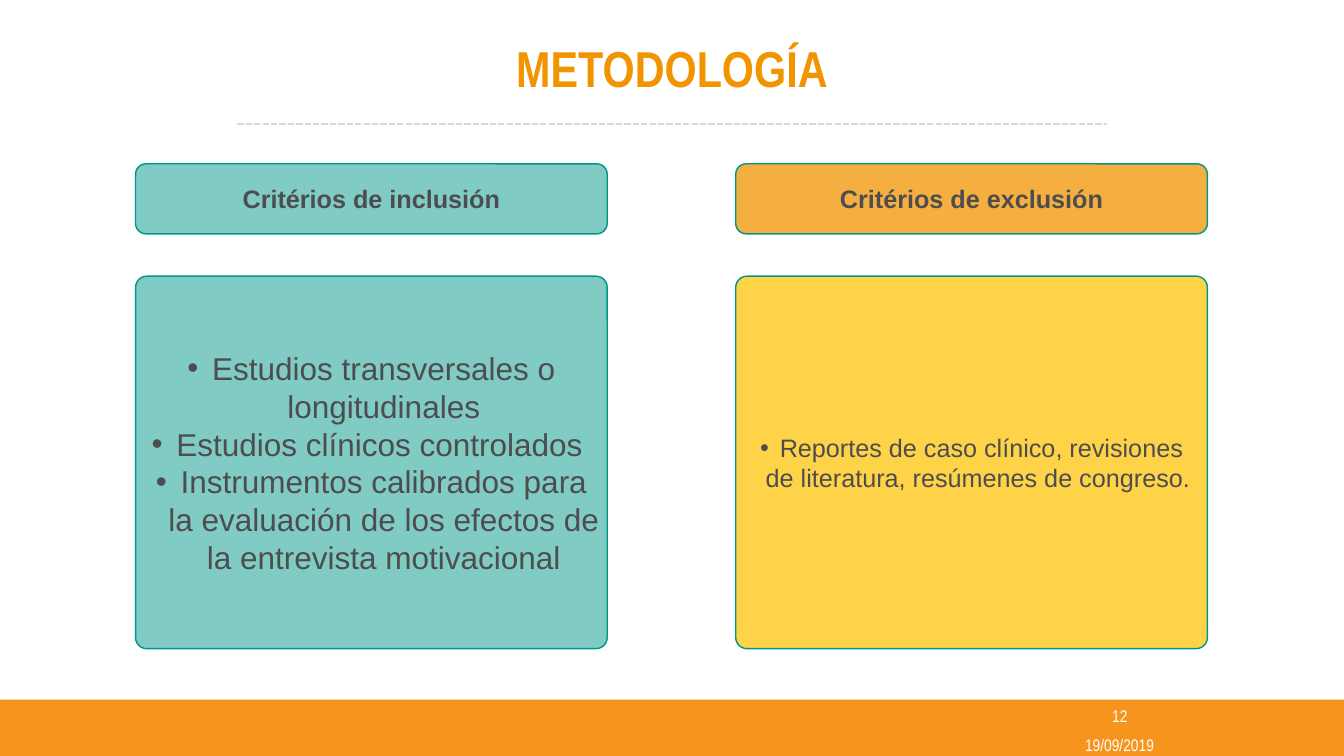
"""Build the methodology slide with its inclusion and exclusion criteria."""
from dataclasses import dataclass

from lxml import etree
from pptx import Presentation
from pptx import util as u
from pptx.dml.color import RGBColor
from pptx.enum import dml, shapes, text as t
from pptx.oxml import ns

PX = 9144


@dataclass(frozen=True)
class Theme:
    """Colours, fonts and type sizes of the slide."""
    orange: str = "F7941D"
    title: str = "F29400"
    white: str = "FFFFFF"
    ink: str = "4D4D4F"
    rule: str = "D9D9D9"
    edge: str = "009688"
    teal: str = "80CBC4"
    amber: str = "F5AF40"
    yellow: str = "FFD347"
    narrow: str = "Arial Narrow"
    sans: str = "Arial"
    title_size: int = 72
    list_size: int = 45
    label_size: int = 36
    footer_size: int = 24


def px(*lengths):
    """Turn px lengths into EMU."""
    return [u.Emu(length * PX) for length in lengths]


def write(frame, *lines, size, font, color, bold=False, wrap=True, hang=0):
    """Fill a text frame with centred paragraphs, bulleted when hang is set."""
    frame.auto_size = t.MSO_AUTO_SIZE.NONE
    frame.word_wrap = wrap
    frame.vertical_anchor = t.MSO_ANCHOR.MIDDLE
    margin, indent = px(10, hang)
    frame.margin_left = frame.margin_right = margin
    frame.margin_top = frame.margin_bottom = margin
    for index, line in enumerate(lines):
        para = frame.add_paragraph() if index else frame.paragraphs[0]
        para.alignment = t.PP_ALIGN.CENTER
        para.space_before = u.Pt(0)
        if hang:
            properties = para._p.get_or_add_pPr()
            properties.set("marL", str(indent))
            properties.set("indent", str(-indent))
            etree.SubElement(properties, ns.qn("a:buChar")).set("char", "•")
        span = para.add_run()
        span.text = line
        span.font.size = u.Pt(size)
        span.font.name = font
        span.font.bold = bold
        span.font.color.rgb = RGBColor.from_string(color)


class Painter:
    """Hold the theme and the current slide, and draw elements on it."""

    def __init__(self, page, theme):
        """Keep the slide and its theme."""
        self.page = page
        self.theme = theme

    def box(self, kind, place, fill, edge=None, radius=0):
        """Draw a filled preset shape."""
        box = self.page.shapes.add_shape(kind, *px(*place))
        box.shadow.inherit = False
        box.fill.solid()
        box.fill.fore_color.rgb = RGBColor.from_string(fill)
        if edge:
            box.line.color.rgb = RGBColor.from_string(edge)
            box.line.width = u.Pt(2)
            box.adjustments[0] = radius
        else:
            box.line.fill.background()
        return box

    def card(self, place, fill, radius):
        """Draw a rounded card with the theme's edge."""
        kind = shapes.MSO_SHAPE.ROUNDED_RECTANGLE
        return self.box(kind, place, fill, self.theme.edge, radius)

    def rule(self, left, right, top):
        """Draw a dashed horizontal line."""
        line = self.page.shapes.add_connector(
            shapes.MSO_CONNECTOR.STRAIGHT, *px(left, top, right, top))
        line.line.color.rgb = RGBColor.from_string(self.theme.rule)
        line.line.width = u.Pt(3)
        line.line.dash_style = dml.MSO_LINE.SQUARE_DOT
        etree.SubElement(line._element.spPr, ns.qn("a:effectLst"))

    def label(self, place, text, **style):
        """Place a text box."""
        box = self.page.shapes.add_textbox(*px(*place))
        write(box.text_frame, text, **style)

    def fill_placeholder(self, index, place, *lines, **style):
        """Move a placeholder to the front and write in it."""
        holder = self.page.placeholders[index]
        holder.left, holder.top, holder.width, holder.height = px(*place)
        self.page.shapes._spTree.append(holder._element)
        write(holder.text_frame, *lines, **style)


def main():
    """Build and save the slide."""
    deck = Presentation()
    deck.slide_width, deck.slide_height = px(2667, 1500)
    theme = Theme()
    painter = Painter(deck.slides.add_slide(deck.slide_layouts[3]), theme)

    painter.fill_placeholder(
        0, (471, 27, 1725, 215), "METODOLOGÍA", size=theme.title_size,
        font=theme.narrow, color=theme.title, bold=True)
    painter.rule(471, 2196, 246)

    painter.box(shapes.MSO_SHAPE.RECTANGLE, (0, 1388, 2667, 112), theme.orange)
    footer = dict(size=theme.footer_size, font=theme.narrow, color=theme.white)
    painter.label((2193, 1391, 58, 60), "12", wrap=False, **footer)
    painter.label((2116, 1447, 211, 60), "19/09/2019", **footer)

    columns = [
        (269, "Critérios de inclusión", theme.teal, theme.teal,
         theme.list_size, 49,
         ["Estudios transversales o longitudinales",
          "Estudios clínicos controlados ",
          "Instrumentos calibrados para la evaluación de los efectos "
          "de la entrevista motivacional"]),
        (1460, "Critérios de exclusión", theme.amber, theme.yellow,
         theme.label_size, 39,
         ["Reportes de caso clínico, revisiones de literatura, "
          "resúmenes de congreso. "]),
    ]
    for index, column in enumerate(columns, start=1):
        left, heading, head_fill, body_fill, size, hang, items = column
        head = painter.card((left, 325, 936, 139), head_fill, 0.15)
        write(head.text_frame, heading, size=theme.label_size,
              font=theme.sans, color=theme.ink, bold=True)
        painter.card((left, 548, 936, 739), body_fill, 0.03)
        painter.fill_placeholder(
            index, (left + 6, 548, 924, 739), *items, size=size,
            font=theme.sans, color=theme.ink, hang=hang)

    deck.save("out.pptx")


if __name__ == "__main__":
    main()
